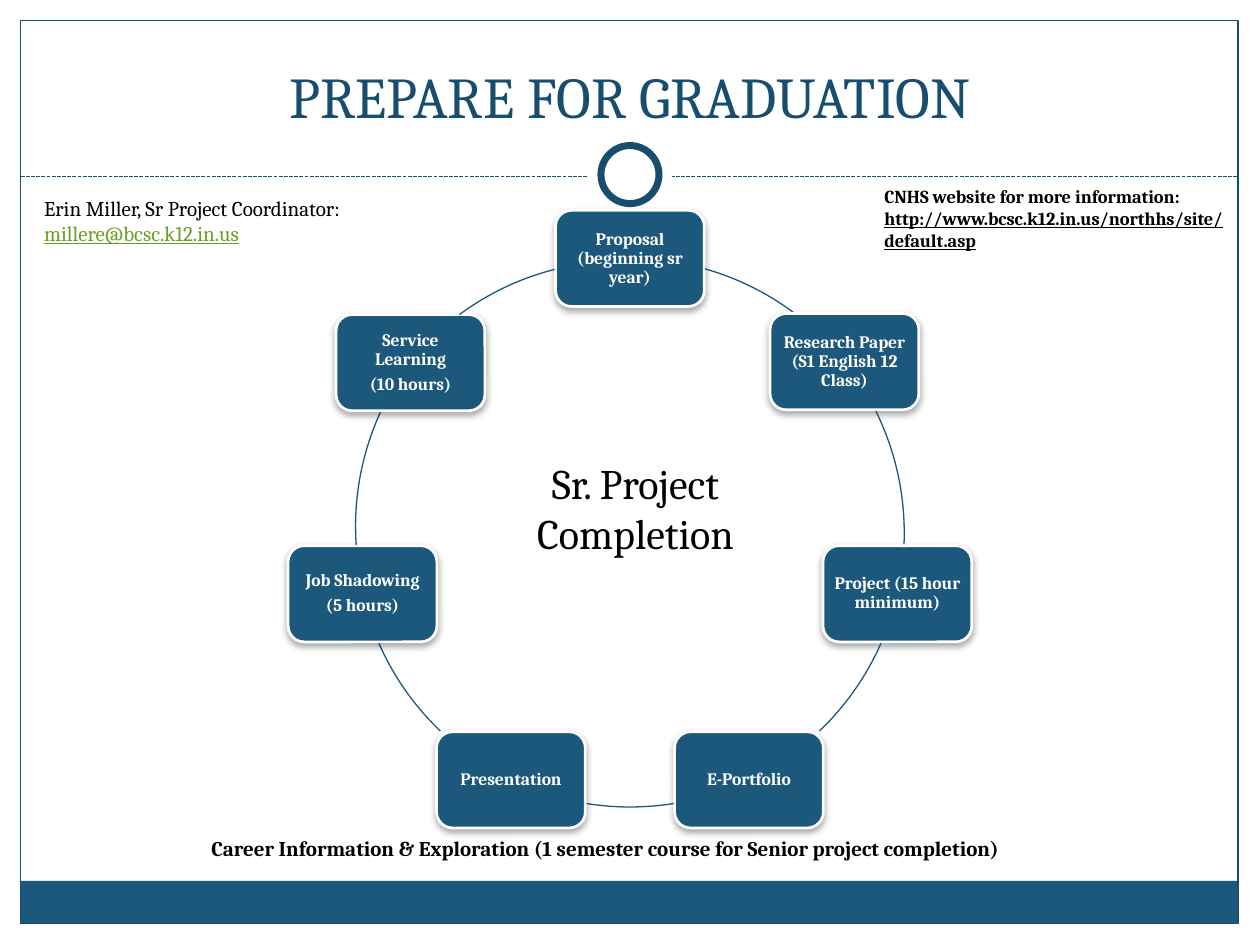
import math
from dataclasses import dataclass

import pptx
import pptx.dml.color
import pptx.enum.dml
import pptx.enum.shapes
import pptx.enum.text
import pptx.oxml
import pptx.oxml.ns
import pptx.util

Cm, Pt = pptx.util.Cm, pptx.util.Pt
SHAPE = pptx.enum.shapes.MSO_SHAPE
ALIGN = pptx.enum.text.PP_ALIGN
ANCHOR = pptx.enum.text.MSO_ANCHOR

FONT = "Cambria"
BLUE, DARK_BLUE, GREEN = "1B587C", "184E6D", "6B9F25"
WHITE, BLACK = "FFFFFF", "000000"
CENTER_X, CENTER_Y, RADIUS = 12.7, 10.74, 5.53
BOX_W, BOX_H = 3.0, 1.94


@dataclass
class Step:
    """One box on the ring; the arc (degrees) leads on to the next box."""
    lines: list[str]
    arc_start: float
    arc_end: float
    box_shift: tuple[float, float] = (0, 0)
    arc_shift: tuple[float, float] = (0, 0)


@dataclass
class Line:
    text: str
    color: str = BLACK
    underline: bool = False


@dataclass
class Note:
    lines: list[Line]
    box: tuple[float, float, float, float]
    size: float
    bold: bool = False
    align: ALIGN = ALIGN.LEFT


STEPS = [
    Step(["Proposal (beginning sr year)"], 285.9, 307),
    Step(["Research Paper (S1 English 12 Class)"], 333.7, 2.6),
    Step(["Project (15 hour minimum)"], 23.7, 46.3),
    Step(["E-Portfolio"], 80.8, 99.2),
    Step(["Presentation"], 133.7, 156.3),
    Step(["Job Shadowing", "(5 hours)"], 176.1, 204.6, arc_shift=(0, -0.13)),
    Step(["Service Learning", "(10 hours)"], 233.5, 255.7, (-0.1, 0.02), (-0.15, 0.05)),
]

NOTES = [
    Note([Line("Sr. Project Completion")], (9.32, 9.09, 6.98, 2.31), 24, align=ALIGN.CENTER),
    Note([Line("Erin Miller, Sr Project Coordinator:"),
          Line("millere@bcsc.k12.in.us", GREEN, True)], (0.64, 3.81, 8.05, 1.27), 12),
    Note([Line("CNHS website for more information:"),
          Line("http://www.bcsc.k12.in.us/northhs/site/default.asp", underline=True)],
         (17.58, 3.61, 7.62, 1.6), 10.5, bold=True),
    Note([Line("Career Information & Exploration "
               "(1 semester course for Senior project completion)")],
         (4.01, 16.71, 19.89, 0.76), 12, bold=True),
]


def rgb(color: str) -> pptx.dml.color.RGBColor:
    return pptx.dml.color.RGBColor.from_string(color)


def add_shape(s, kind, x: float, y: float, w: float, h: float,
              fill: str | None = None, line: str | None = None, width: float = 0.75):
    sp = s.shapes.add_shape(kind, Cm(x), Cm(y), Cm(w), Cm(h))
    sp.shadow.inherit = False
    if fill:
        sp.fill.solid()
        sp.fill.fore_color.rgb = rgb(fill)
    else:
        sp.fill.background()
    if line:
        sp.line.color.rgb = rgb(line)
        sp.line.width = Pt(width)
    else:
        sp.line.fill.background()
    return sp


def add_disc(s, x: float, y: float, d: float, **style):
    """Add a circle of diameter d centred on (x, y)."""
    return add_shape(s, SHAPE.OVAL, x - d / 2, y - d / 2, d, d, **style)


def style_paragraph(p, size: float, color: str, bold: bool = False,
                    align: ALIGN = ALIGN.CENTER) -> None:
    p.alignment = align
    p.font.name, p.font.size, p.font.bold = FONT, Pt(size), bold
    p.font.color.rgb = rgb(color)


def fill_paragraphs(tf, texts: list[str]):
    tf.text = "\n".join(texts)
    return tf.paragraphs


def add_drop_shadow(sp) -> None:
    effects = sp._element.spPr.find(pptx.oxml.ns.qn("a:effectLst"))
    effects.append(pptx.oxml.parse_xml(
        f'<a:outerShdw {pptx.oxml.ns.nsdecls("a")} blurRad="{Pt(4)}" dist="{Pt(2)}" '
        'dir="5400000" rotWithShape="0"><a:srgbClr val="000000">'
        '<a:alpha val="35000"/></a:srgbClr></a:outerShdw>'))


def add_frame(s) -> None:
    add_shape(s, SHAPE.RECTANGLE, 0.42, 17.76, 24.54, 0.86, fill=BLUE)
    add_shape(s, SHAPE.RECTANGLE, 0.42, 0.42, 24.54, 18.2, line=DARK_BLUE)
    rule = s.shapes.add_connector(pptx.enum.shapes.MSO_CONNECTOR.STRAIGHT,
                                  Cm(0.42), Cm(3.56), Cm(24.97), Cm(3.56))
    rule.line.color.rgb = rgb(DARK_BLUE)
    rule.line.width = Pt(0.75)
    rule.line.dash_style = pptx.enum.dml.MSO_LINE.SQUARE_DOT
    pptx.oxml.ns.qn("a:effectLst")
    rule._element.spPr.append(
        pptx.oxml.parse_xml(f'<a:effectLst {pptx.oxml.ns.nsdecls("a")}/>'))
    add_disc(s, CENTER_X, 3.52, 1.69, fill=WHITE)
    add_disc(s, CENTER_X, 3.52, 1.17, fill=WHITE, line=DARK_BLUE, width=4)


def add_title(s, text: str) -> None:
    sp = s.shapes.title
    sp.left, sp.top, sp.width, sp.height = Cm(0.85), Cm(0.64), Cm(23.7), Cm(2.1)
    tf = sp.text_frame
    tf.text = text
    tf.vertical_anchor = ANCHOR.BOTTOM
    style_paragraph(tf.paragraphs[0], 33, DARK_BLUE)


def add_step(s, step: Step, index: int) -> None:
    angle = 2 * math.pi * index / len(STEPS)
    x = CENTER_X + RADIUS * math.sin(angle) + step.box_shift[0]
    y = CENTER_Y - RADIUS * math.cos(angle) + step.box_shift[1]
    sp = add_shape(s, SHAPE.ROUNDED_RECTANGLE, x - BOX_W / 2, y - BOX_H / 2,
                   BOX_W, BOX_H, BLUE, WHITE, 1.57)
    add_drop_shadow(sp)
    tf = sp.text_frame
    tf.word_wrap = True
    tf.vertical_anchor = ANCHOR.MIDDLE
    tf.margin_left = tf.margin_right = tf.margin_top = tf.margin_bottom = Cm(0.1)
    for p in fill_paragraphs(tf, step.lines):
        style_paragraph(p, 10, WHITE, bold=True)
        p.line_spacing = 0.9
        p.space_after = Pt(3.5)

    dx, dy = step.arc_shift
    arc = add_shape(s, SHAPE.ARC, CENTER_X - RADIUS + dx, CENTER_Y - RADIUS + dy,
                    2 * RADIUS, 2 * RADIUS, line=BLUE)
    # Angles are stored in 1/60000 degree, adjustments in 1/100000
    arc.adjustments[0] = step.arc_start * 0.6
    arc.adjustments[1] = step.arc_end * 0.6


def add_note(s, note: Note) -> None:
    tf = s.shapes.add_textbox(*map(Cm, note.box)).text_frame
    tf.word_wrap = True
    paragraphs = fill_paragraphs(tf, [line.text for line in note.lines])
    for p, line in zip(paragraphs, note.lines):
        style_paragraph(p, note.size, line.color, note.bold, note.align)
        p.font.underline = line.underline


def main() -> None:
    prs = pptx.Presentation()
    prs.slide_width, prs.slide_height = Cm(25.4), Cm(19.05)
    s = prs.slides.add_slide(prs.slide_layouts[5])
    add_frame(s)
    add_title(s, "PREPARE FOR GRADUATION")
    for index, step in enumerate(STEPS):
        add_step(s, step, index)
    for note in NOTES:
        add_note(s, note)
    prs.save("out.pptx")


if __name__ == "__main__":
    main()
